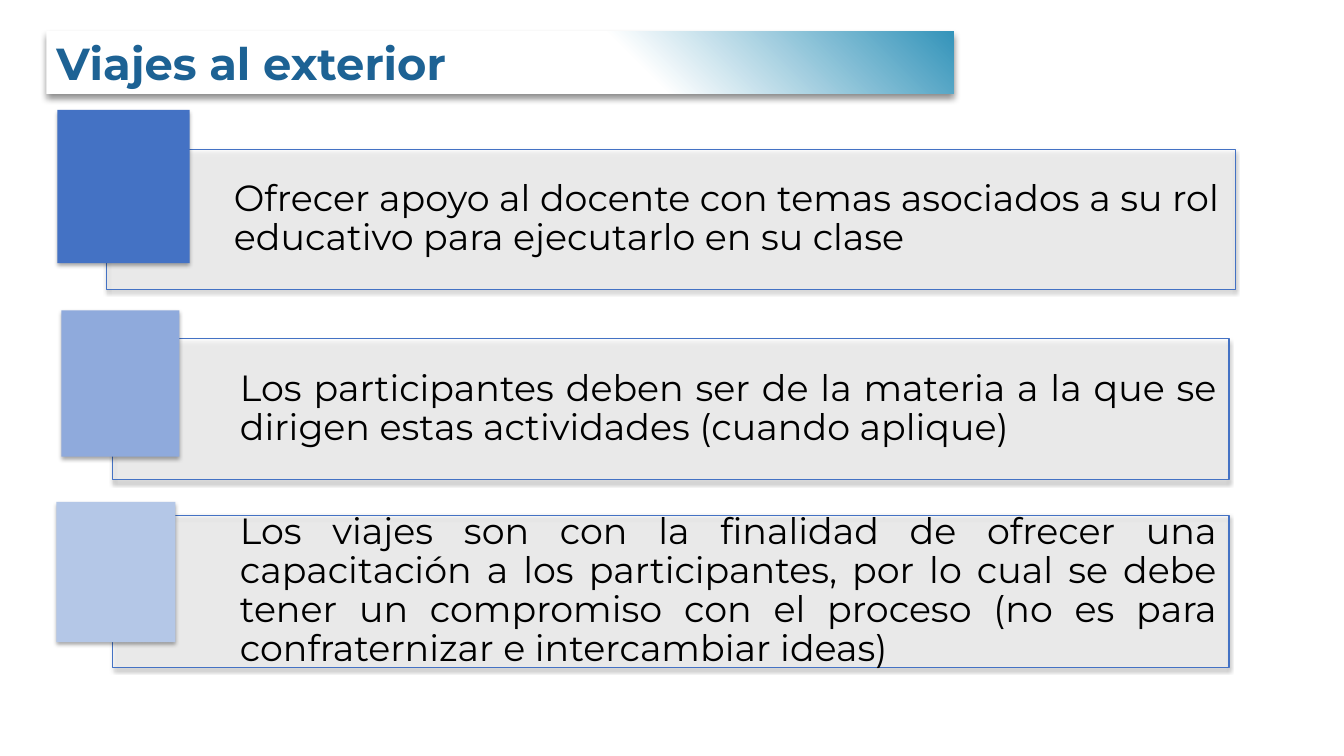
from dataclasses import dataclass

from lxml import etree
from pptx import Presentation
from pptx.dml.color import RGBColor
from pptx.enum.shapes import MSO_SHAPE
from pptx.enum.text import MSO_ANCHOR, MSO_AUTO_SIZE, PP_ALIGN
from pptx.oxml.ns import qn
from pptx.util import Inches, Pt

RECTANGLE = MSO_SHAPE.RECTANGLE
MIDDLE = MSO_ANCHOR.MIDDLE
NO_AUTOFIT = MSO_AUTO_SIZE.NONE
LEFT, JUSTIFY = PP_ALIGN.LEFT, PP_ALIGN.JUSTIFY
TITLE_ONLY = 5


@dataclass(frozen=True)
class Theme:
    font: str = "Montserrat"
    title_size: float = 32
    body_size: float = 26
    title: str = "1D6294"
    body: str = "000000"
    white: str = "FFFFFF"
    banner_end: str = "3494BA"
    panel_line: str = "4472C4"
    panel_opacity: int = 40
    shadow: str = "000000"


THEME = Theme()

REASONS = [
    ("Ofrecer apoyo al docente con temas asociados a su rol educativo "
     "para ejecutarlo en su clase",
     LEFT, (1.06, 1.48, 11.19, 1.39), (0.57, 1.09, 1.31, 1.52), "4472C4"),
    ("Los participantes deben ser de la materia a la que se dirigen "
     "estas actividades (cuando aplique)",
     JUSTIFY, (1.12, 3.36, 11.07, 1.4), (0.61, 3.08, 1.17, 1.45), "8FAADC"),
    ("Los viajes son con la finalidad de ofrecer una capacitación a los "
     "participantes, por lo cual se debe tener un compromiso con el proceso "
     "(no es para confraternizar e intercambiar ideas)",
     JUSTIFY, (1.12, 5.11, 11.07, 1.51), (0.56, 4.98, 1.18, 1.39), "B4C7E7"),
]


def inches(box):
    return [Inches(length) for length in box]


def rgb(color):
    return RGBColor.from_string(color)


def add_alpha(color_element, percent):
    etree.SubElement(color_element, qn("a:alpha"), val=str(percent * 1000))


def cast_shadow(shape, opacity, blur, distance):
    shape.shadow.inherit = False
    effects = shape._element.spPr.find(qn("a:effectLst"))
    shadow = etree.SubElement(
        effects, qn("a:outerShdw"), blurRad=str(Pt(blur)),
        dist=str(Pt(distance)), dir="5400000", algn="ctr", rotWithShape="0")
    color = etree.SubElement(shadow, qn("a:srgbClr"), val=THEME.shadow)
    add_alpha(color, opacity)


def write(frame, text, size, color, align, bold=False):
    frame.text = text
    frame.word_wrap = True
    frame.auto_size = NO_AUTOFIT
    frame.vertical_anchor = MIDDLE
    paragraph = frame.paragraphs[0]
    paragraph.alignment = align
    font = paragraph.runs[0].font
    font.name, font.size, font.bold = THEME.font, Pt(size), bold
    font.color.rgb = rgb(color)
    return paragraph


def add_banner(slide, text, box):
    banner = slide.shapes.title
    banner.left, banner.top, banner.width, banner.height = inches(box)
    banner.fill.gradient()
    banner.fill.gradient_angle = 45
    stops = [(0.64, THEME.white), (1, THEME.banner_end)]
    for stop, (position, color) in zip(banner.fill.gradient_stops, stops):
        stop.position = position
        stop.color.rgb = rgb(color)
    cast_shadow(banner, 45, 5, 3)
    write(banner.text_frame, text, THEME.title_size, THEME.title, LEFT, True)


def add_panel(slide, box):
    panel = slide.shapes.add_shape(RECTANGLE, *inches(box))
    panel.fill.solid()
    panel.fill.fore_color.rgb = rgb(THEME.white)
    fill = panel._element.spPr.find(qn("a:solidFill"))
    add_alpha(fill[0], THEME.panel_opacity)
    panel.line.color.rgb = rgb(THEME.panel_line)
    panel.line.width = Pt(0.75)
    cast_shadow(panel, 35, 3.1, 1.8)


def add_statement(slide, text, align, box):
    frame = slide.shapes.add_textbox(*inches(box)).text_frame
    frame.margin_left = Inches(1.26)
    frame.margin_top = frame.margin_right = frame.margin_bottom = Inches(0.11)
    paragraph = write(frame, text, THEME.body_size, THEME.body, align)
    paragraph.line_spacing = 0.9


def add_marker(slide, box, color):
    marker = slide.shapes.add_shape(RECTANGLE, *inches(box))
    marker.fill.solid()
    marker.fill.fore_color.rgb = rgb(color)
    marker.line.fill.background()
    cast_shadow(marker, 35, 3.1, 1.8)


def add_reason(slide, text, align, panel_box, marker_box, marker_color):
    add_panel(slide, panel_box)
    add_statement(slide, text, align, panel_box)
    add_marker(slide, marker_box, marker_color)


def main():
    deck = Presentation()
    deck.slide_width, deck.slide_height = Inches(13.33), Inches(7.5)
    slide = deck.slides.add_slide(deck.slide_layouts[TITLE_ONLY])
    add_banner(slide, "Viajes al exterior", (0.46, 0.31, 9, 0.62))
    for reason in REASONS:
        add_reason(slide, *reason)
    deck.save("out.pptx")


if __name__ == "__main__":
    main()
